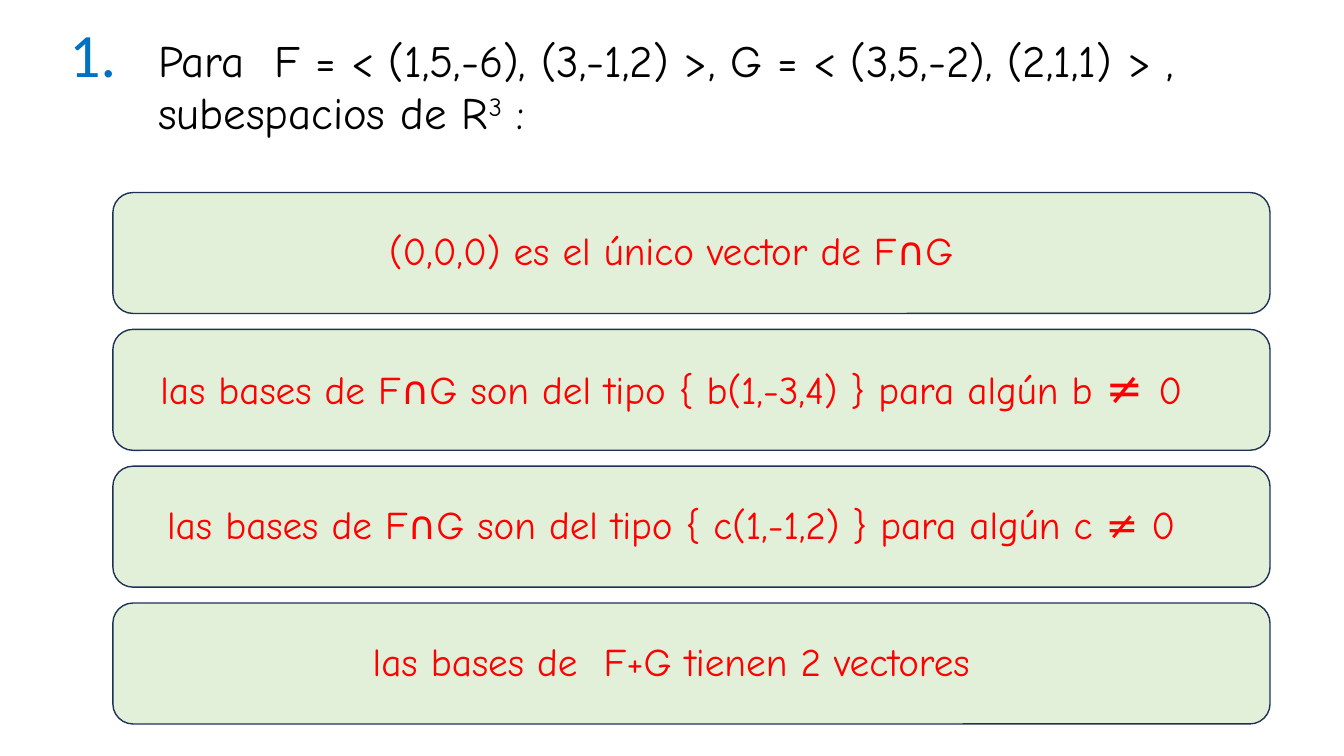
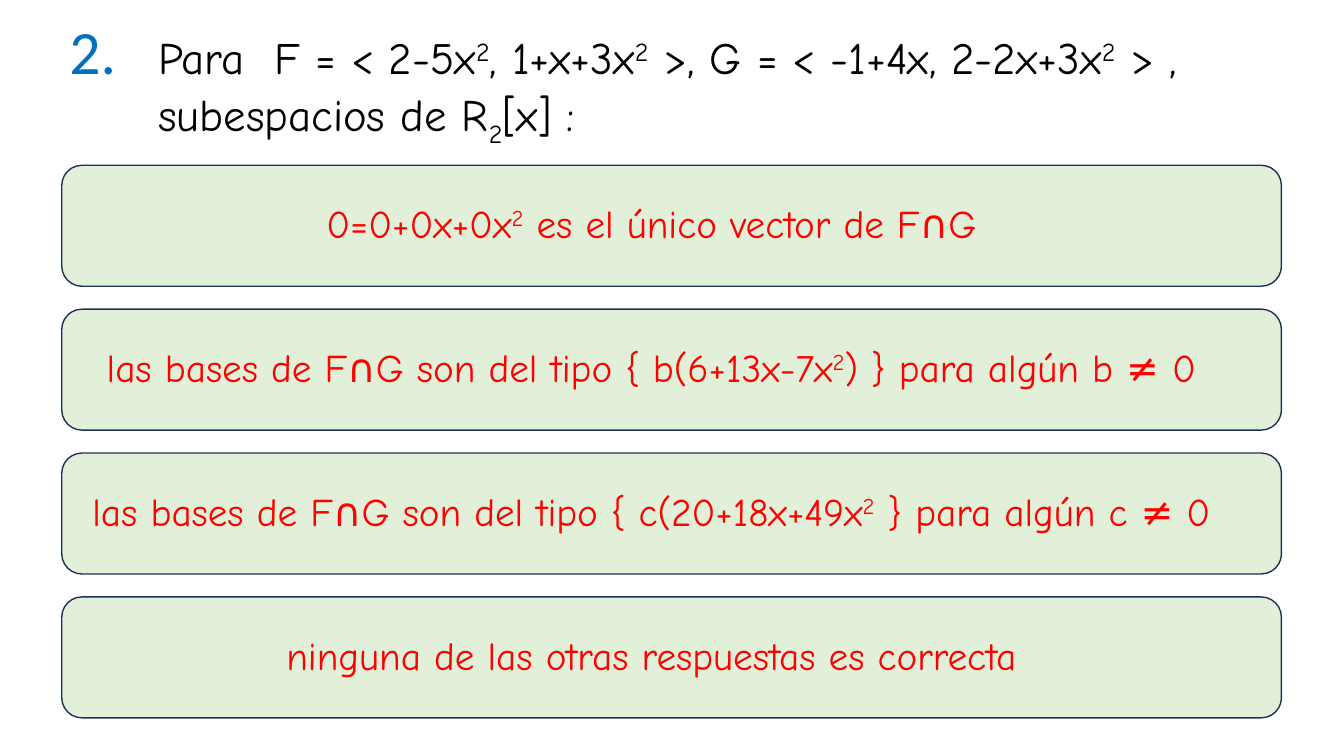
from dataclasses import dataclass

from pptx import Presentation
from pptx import util as u
from pptx.dml.color import RGBColor
from pptx.enum import shapes, text


@dataclass(frozen=True)
class Theme:
    number: RGBColor = RGBColor.from_string("0070C0")
    question: RGBColor = RGBColor.from_string("000000")
    answer: RGBColor = RGBColor.from_string("FF0000")
    card: RGBColor = RGBColor.from_string("E2F0D9")
    border: RGBColor = RGBColor.from_string("1E3256")
    number_font: str = "Calibri"
    body_font: str = "Comic Neue"
    number_size: u.Pt = u.Pt(44)
    question_size: u.Pt = u.Pt(32)
    answer_size: u.Pt = u.Pt(28)


theme = Theme()
BASELINES = {"^": "30000", "_": "-25000"}

# Grid: 100 columns by 100 rows
prs = Presentation()
prs.slide_width, prs.slide_height = u.Inches(13.33), u.Inches(7.5)
COL, ROW = prs.slide_width / 100, prs.slide_height / 100


def place(left, top, width, height):
    return int(left * COL), int(top * ROW), int(width * COL), int(height * ROW)


def write(paragraph, marked, size, color):
    """Pieces between bars: ^ raises, _ lowers, ~ enlarges."""
    paragraph.line_spacing = 0.9
    font = paragraph.font
    font.name, font.size, font.color.rgb = theme.body_font, size, color
    for piece in marked.split("|"):
        mark = piece[0] if piece[0] in "^_~" else ""
        run = paragraph.add_run()
        run.text = piece[len(mark):]
        if mark in BASELINES:
            run._r.get_or_add_rPr().set("baseline", BASELINES[mark])
        elif mark:
            run.font.size = theme.question_size


# Content, with the grid position of each set of answers
questions = [
    dict(
        lines=["Para  F = < (1,5,-6), (3,-1,2) >, G = < (3,5,-2), (2,1,1) > ,",
               "subespacios de R|^3| :"],
        left=8.4, width=86.1, top=25.47, pitch=18.1,
        answers=["(0,0,0) es el único vector de F∩G",
                 "las bases de F∩G son del tipo { b(1,-3,4) } para algún b |~≠ |0",
                 "las bases de F∩G son del tipo { c(1,-1,2) } para algún c ≠ 0",
                 "las bases de  F+G tienen 2 vectores"]),
    dict(
        lines=["Para  F = < 2-5x|^2|, 1+x+3x|^2| >, G = < -1+4x, 2-2x+3x|^2| > ,",
               "subespacios de R|_2|[x] :"],
        left=4.6, width=90.75, top=21.87, pitch=19.03,
        answers=["0=0+0x+0x|^2| es el único vector de F∩G",
                 "las bases de F∩G son del tipo { b(6+13x-7x|^2|) } para algún b ≠ 0",
                 "las bases de F∩G son del tipo { c(20+18x+49x|^2| } para algún c ≠ 0",
                 "ninguna de las otras respuestas es correcta"]),
]

for number, question in enumerate(questions, 1):
    slide = prs.slides.add_slide(prs.slide_layouts[6])

    # Question, hanging from its number
    heading = slide.shapes.add_textbox(*place(4.43, 1.2, 92.7, 19.33)).text_frame
    heading.word_wrap = True
    heading.vertical_anchor = text.MSO_ANCHOR.MIDDLE
    statement = heading.paragraphs[0]
    hanging = statement._p.get_or_add_pPr()
    hanging.set("marL", str(u.Inches(0.88)))
    hanging.set("indent", str(-u.Inches(0.88)))
    label = statement.add_run()
    label.text = f"{number}.\t"
    label.font.name, label.font.size = theme.number_font, theme.number_size
    label.font.color.rgb = theme.number
    first, second = question["lines"]
    write(statement, first, theme.question_size, theme.question)
    statement.add_line_break()
    write(statement, second, theme.question_size, theme.question)

    # Answer cards
    for index, answer in enumerate(question["answers"]):
        top = question["top"] + index * question["pitch"]
        card = slide.shapes.add_shape(
            shapes.MSO_SHAPE.ROUNDED_RECTANGLE,
            *place(question["left"], top, question["width"], 16))
        card.shadow.inherit = False
        card.fill.solid()
        card.fill.fore_color.rgb = theme.card
        card.line.color.rgb = theme.border
        card.line.width = u.Pt(1)
        frame = card.text_frame
        frame.word_wrap = True
        frame.vertical_anchor = text.MSO_ANCHOR.MIDDLE
        frame.margin_right = u.Inches(0.5)
        choice = frame.paragraphs[0]
        choice.alignment = text.PP_ALIGN.CENTER
        choice.space_before = u.Pt(10)
        write(choice, answer, theme.answer_size, theme.answer)

prs.save("out.pptx")
